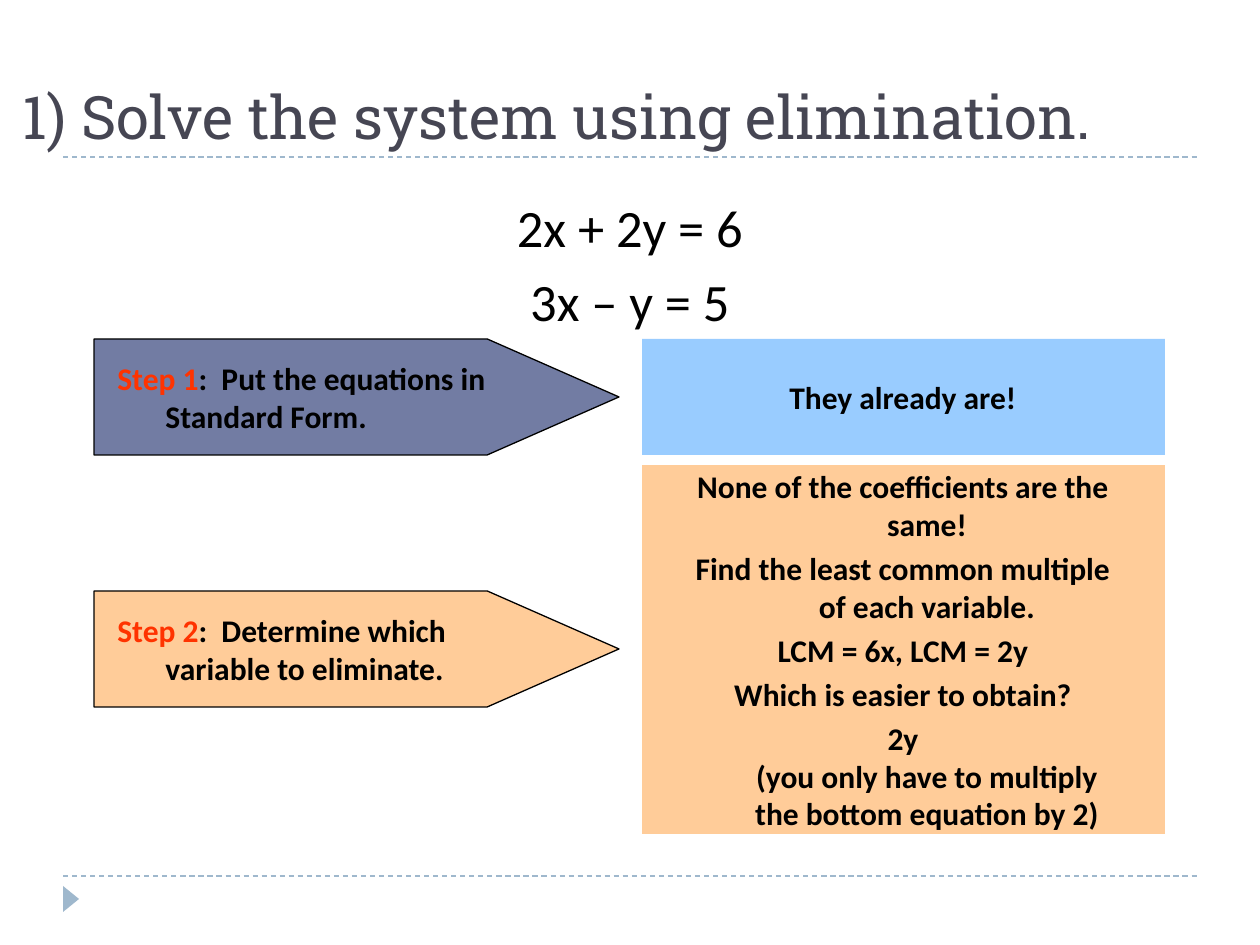
from lxml import etree
from pptx import Presentation
from pptx.dml.color import RGBColor
from pptx.enum.dml import MSO_LINE
from pptx.enum.shapes import MSO_CONNECTOR, MSO_SHAPE
from pptx.enum.text import MSO_ANCHOR, MSO_AUTO_SIZE, PP_ALIGN
from pptx.oxml.ns import qn
from pptx.util import Emu, Pt

LEFT, CENTER = PP_ALIGN.LEFT, PP_ALIGN.CENTER
TOP, MIDDLE, BOTTOM = MSO_ANCHOR.TOP, MSO_ANCHOR.MIDDLE, MSO_ANCHOR.BOTTOM
BLACK = RGBColor(0x00, 0x00, 0x00)
RED = RGBColor(0xFF, 0x33, 0x00)
SLATE = RGBColor(0x46, 0x46, 0x53)
INDIGO = RGBColor(0x72, 0x7C, 0xA3)
SKY = RGBColor(0x99, 0xCC, 0xFF)
PEACH = RGBColor(0xFF, 0xCC, 0x99)
STEEL = RGBColor(0x9F, 0xB8, 0xCD)

# Content: a paragraph is a list of (text, colour) runs; "\n" breaks a line
TITLE = "1) Solve the system using elimination."
EQUATIONS = ["2x + 2y = 6", "3x – y = 5"]
STEPS = [
    {
        "label": "Step 1", "task": ":  Put the equations in Standard Form.",
        "answer": ["They already are!"],
        "arrow_fill": INDIGO, "answer_fill": SKY,
        "answer_top": 339, "answer_height": 116,
    },
    {
        "label": "Step 2", "task": ":  Determine which variable to eliminate.",
        "answer": [
            "None of the coefficients are the\nsame!",
            "Find the least common multiple\nof each variable.",
            "LCM = 6x, LCM = 2y",
            "Which is easier to obtain?",
            "2y\n(you only have to multiply\nthe bottom equation by 2)",
        ],
        "arrow_fill": PEACH, "answer_fill": PEACH,
        "answer_top": 465, "answer_height": 369,
    },
]

# Layout in px
SLIDE_WIDTH, SLIDE_HEIGHT = 1260, 945
RULE_LEFT, RULE_RIGHT = 63, 1197
RULE_TOPS = [876, 157]
ARROW_LEFT, ARROW_WIDTH, ARROW_HEIGHT = 94, 525, 116
ANSWER_LEFT, ANSWER_WIDTH = 642, 523
TEXT_INSET = 11


def px(length):
    return Emu(round(length * 914400 / 126))


def place(shape, left, top, width, height):
    shape.left, shape.top = px(left), px(top)
    shape.width, shape.height = px(width), px(height)


def write(shape, paragraphs, size, font="Calibri", bold=False, align=LEFT,
          anchor=TOP, before=0, hanging=0):
    frame = shape.text_frame
    frame.word_wrap = True
    frame.auto_size = MSO_AUTO_SIZE.NONE
    frame.vertical_anchor = anchor
    for index, runs in enumerate(paragraphs):
        paragraph = frame.add_paragraph() if index else frame.paragraphs[0]
        paragraph.alignment = align
        paragraph.space_before = Pt(before)
        properties = paragraph._p.get_or_add_pPr()
        properties.set("marL", str(px(hanging)))
        properties.set("indent", str(-px(hanging)))
        etree.SubElement(properties, qn("a:buNone"))
        for text, color in runs:
            for line_index, line in enumerate(text.split("\n")):
                if line_index:
                    paragraph.add_line_break()
                run = paragraph.add_run()
                run.text = line
                run.font.name = font
                run.font.size = Pt(size)
                run.font.bold = bold
                run.font.color.rgb = color


def add_block(slide, kind, box, fill, outline=None):
    shape = slide.shapes.add_shape(kind, *map(px, box))
    shape.shadow.inherit = False
    shape.fill.solid()
    shape.fill.fore_color.rgb = fill
    if outline is None:
        shape.line.fill.background()
    else:
        shape.line.color.rgb = outline
        shape.line.width = Pt(0.75)
    return shape


def add_rule(slide, top):
    rule = slide.shapes.add_connector(
        MSO_CONNECTOR.STRAIGHT, px(RULE_LEFT), px(top), px(RULE_RIGHT), px(top))
    rule.line.color.rgb = STEEL
    rule.line.width = Pt(0.75)
    rule.line.dash_style = MSO_LINE.DASH
    etree.SubElement(rule._element.spPr, qn("a:effectLst"))


def add_step_text(slide, box, paragraphs, align):
    text_box = slide.shapes.add_textbox(*map(px, box))
    write(text_box, paragraphs, 18, bold=True, align=align, anchor=MIDDLE,
          before=3.6, hanging=48)


def add_step(slide, step):
    top, height = step["answer_top"], step["answer_height"]
    # The arrow is centred on its answer
    arrow_top = top + (height - ARROW_HEIGHT) // 2
    arrow = add_block(slide, MSO_SHAPE.PENTAGON,
                      (ARROW_LEFT, arrow_top, ARROW_WIDTH, ARROW_HEIGHT),
                      step["arrow_fill"], BLACK)
    arrow.adjustments[0] = 1.136
    add_step_text(slide,
                  (ARROW_LEFT + TEXT_INSET, arrow_top + TEXT_INSET, 451,
                   ARROW_HEIGHT - 2 * TEXT_INSET),
                  [[(step["label"], RED), (step["task"], BLACK)]], LEFT)
    add_block(slide, MSO_SHAPE.RECTANGLE,
              (ANSWER_LEFT, top, ANSWER_WIDTH, height), step["answer_fill"])
    add_step_text(slide,
                  (ANSWER_LEFT + 9, top + TEXT_INSET, 504, height - 2 * TEXT_INSET),
                  [[(text, BLACK)] for text in step["answer"]], CENTER)


def main():
    presentation = Presentation()
    presentation.slide_width = px(SLIDE_WIDTH)
    presentation.slide_height = px(SLIDE_HEIGHT)
    slide = presentation.slides.add_slide(presentation.slide_layouts[1])

    # Title and equations
    title, body = slide.placeholders
    place(title, 10, 32, 1144, 126)
    write(title, [[(TITLE, SLATE)]], 34.2, font="Roboto Slab", anchor=BOTTOM)
    place(body, 84, 189, 1092, 630)
    write(body, [[(text, BLACK)] for text in EQUATIONS], 30, align=CENTER,
          before=6, hanging=38)

    # Dashed rules and corner marker
    for top in RULE_TOPS:
        add_rule(slide, top)
    marker = add_block(slide, MSO_SHAPE.ISOSCELES_TRIANGLE, (58, 891, 26, 16), STEEL)
    marker.rotation = 90

    # Steps with their answers
    for step in STEPS:
        add_step(slide, step)

    presentation.save("out.pptx")


if __name__ == "__main__":
    main()
